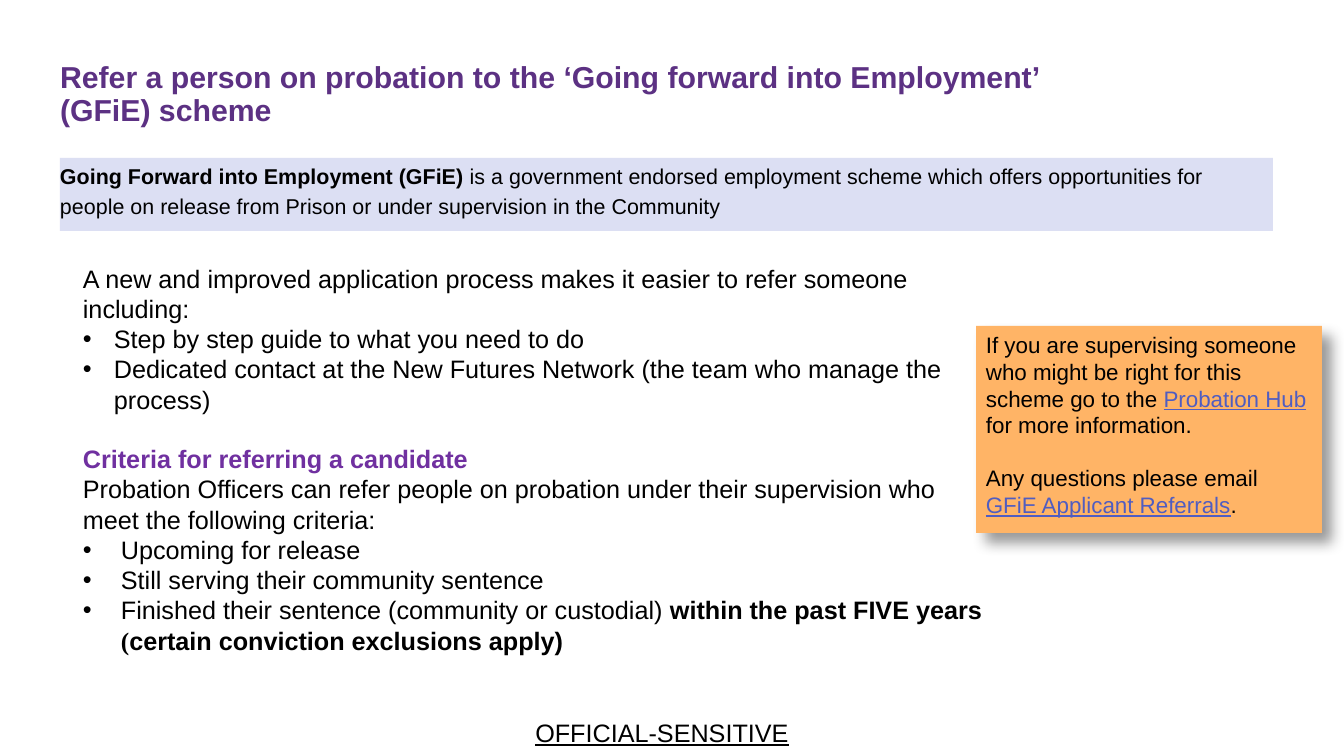
from lxml.etree import SubElement
from pptx import Presentation
from pptx.dml.color import RGBColor
from pptx.enum.shapes import MSO_SHAPE
from pptx.enum.text import MSO_ANCHOR, PP_ALIGN
from pptx.oxml.ns import qn
from pptx.util import Emu, Pt

EMU_PER_PX = 914400 / 100.8
BLACK, TITLE_PURPLE, HEADING_PURPLE, LINK_BLUE = "000000", "5C3183", "7030A0", "505DC1"


def px(length):
    """Convert pixels to EMU."""
    return Emu(round(length * EMU_PER_PX))


def color(value):
    """Turn a hex string into a colour."""
    return RGBColor.from_string(value)


def add_text_box(slide, box, margins=None, wrap=True):
    """Add a text box and return its text frame."""
    frame = slide.shapes.add_textbox(*map(px, box)).text_frame
    set_up_frame(frame, margins, wrap)
    return frame


def add_panel(slide, box, fill, margins=None):
    """Add a filled rectangle without outline."""
    shape = slide.shapes.add_shape(MSO_SHAPE.RECTANGLE, *map(px, box))
    shape.shadow.inherit = False
    shape.fill.solid()
    shape.fill.fore_color.rgb = color(fill)
    shape.line.fill.background()
    set_up_frame(shape.text_frame, margins)
    return shape


def set_up_frame(frame, margins, wrap=True):
    """Set wrapping, top anchor and optional left, top, right, bottom margins."""
    frame.word_wrap = wrap
    frame.vertical_anchor = MSO_ANCHOR.TOP
    if margins:
        (frame.margin_left, frame.margin_top,
         frame.margin_right, frame.margin_bottom) = map(px, margins)


def add_run(paragraph, text, size, fill=BLACK, bold=False, underline=False, font="Arial"):
    """Add one formatted run."""
    run = paragraph.add_run()
    run.text = text
    run.font.name = font
    run.font.size = Pt(size)
    run.font.bold = bold
    run.font.underline = underline
    run.font.color.rgb = color(fill)


def add_paragraph(frame, runs, size, indent=0, space_before=0):
    """Add a left-aligned paragraph, bulleted when it has an indent."""
    first = frame.paragraphs[0]
    paragraph = frame.add_paragraph() if first.runs else first
    paragraph.alignment = PP_ALIGN.LEFT
    if space_before:
        paragraph.space_before = Pt(space_before)
    if indent:
        properties = paragraph._p.get_or_add_pPr()
        properties.set("marL", str(px(indent)))
        properties.set("indent", str(-px(indent)))
        SubElement(properties, qn("a:buFont"), typeface="Arial")
        SubElement(properties, qn("a:buChar"), char="•")
    for text, style in runs:
        add_run(paragraph, text, size, **style)
    return paragraph


def add_shadow(shape):
    """Give a shape a soft shadow to the lower right."""
    effects = shape._element.spPr.find(qn("a:effectLst"))
    shadow = SubElement(effects, qn("a:outerShdw"), blurRad=str(Pt(10)), dist=str(Pt(10)),
                        dir=str(45 * 60000), algn="tl", rotWithShape="0")
    shade = SubElement(shadow, qn("a:srgbClr"), val=BLACK)
    SubElement(shade, qn("a:alpha"), val="40000")


def add_title(slide, box):
    """Add the slide title."""
    frame = add_text_box(slide, box, (0, 0, 0, 32))
    frame.vertical_anchor = MSO_ANCHOR.MIDDLE
    text = "Refer a person on probation to the ‘Going forward into Employment’ (GFiE) scheme"
    paragraph = add_paragraph(frame, [(text, {"fill": TITLE_PURPLE, "bold": True})], 21.6)
    paragraph.line_spacing = 0.9


def add_summary(slide, box):
    """Add the tinted band that explains the scheme."""
    band = add_panel(slide, box, "DCDFF3", (0, 0, 0, 0))
    paragraph = add_paragraph(band.text_frame, [
        ("Going Forward into Employment (GFiE)", {"bold": True}),
        (" is a government endorsed employment scheme which offers opportunities for people "
         "on release from Prison or under supervision in the Community", {}),
    ], 15.3)
    paragraph.line_spacing = 1.18


def add_details(slide, box):
    """Add the process and criteria text."""
    frame = add_text_box(slide, box)
    size, process_indent, criteria_indent = 18, 31, 38
    add_paragraph(frame, [("A new and improved application process makes it easier to refer "
                           "someone including:", {})], size)
    for step in ("Step by step guide to what you need to do",
                 "Dedicated contact at the New Futures Network (the team who manage the process)"):
        add_paragraph(frame, [(step, {})], size, process_indent)
    heading = ("Criteria for referring a candidate", {"fill": HEADING_PURPLE, "bold": True})
    add_paragraph(frame, [heading], size, space_before=21)
    add_paragraph(frame, [("Probation Officers can refer people on probation under their "
                           "supervision who meet the following criteria:", {})], size)
    criteria = (
        [("Upcoming for release", {})],
        [("Still serving their community sentence", {})],
        [("Finished their sentence (community or custodial) ", {}),
         ("within the past FIVE years", {"bold": True}),
         (" (", {"bold": True, "font": "Times New Roman"}),
         ("certain conviction exclusions apply)", {"bold": True})],
    )
    for runs in criteria:
        add_paragraph(frame, runs, size, criteria_indent)


def add_callout(slide, box):
    """Add the orange note with its shadow."""
    note = add_panel(slide, box, "FFB466")
    add_shadow(note)
    link = {"fill": LINK_BLUE, "underline": True}
    add_paragraph(note.text_frame, [
        ("If you are supervising someone who might be right for this scheme go to the ", {}),
        ("Probation Hub ", link),
        ("for more information.", {}),
    ], 16)
    add_paragraph(note.text_frame, [
        ("Any questions please email ", {}),
        ("GFiE Applicant Referrals", link),
        (".", {}),
    ], 16, space_before=18.5)


def add_marking(slide, box):
    """Add the classification marking at the foot."""
    frame = add_text_box(slide, box, wrap=False)
    paragraph = add_paragraph(frame, [("OFFICIAL-SENSITIVE", {"underline": True})], 18)
    paragraph.alignment = PP_ALIGN.CENTER


def main():
    """Build and save the slide."""
    presentation = Presentation()
    presentation.slide_width, presentation.slide_height = px(1344), px(756)
    slide = presentation.slides.add_slide(presentation.slide_layouts[6])
    add_marking(slide, (524, 712, 276, 40))
    add_title(slide, (60, 83, 989, 56))
    add_details(slide, (73, 258, 934, 407))
    add_summary(slide, (60, 158, 1213, 73))
    add_callout(slide, (976, 326, 346, 207))
    presentation.save("out.pptx")


if __name__ == "__main__":
    main()
